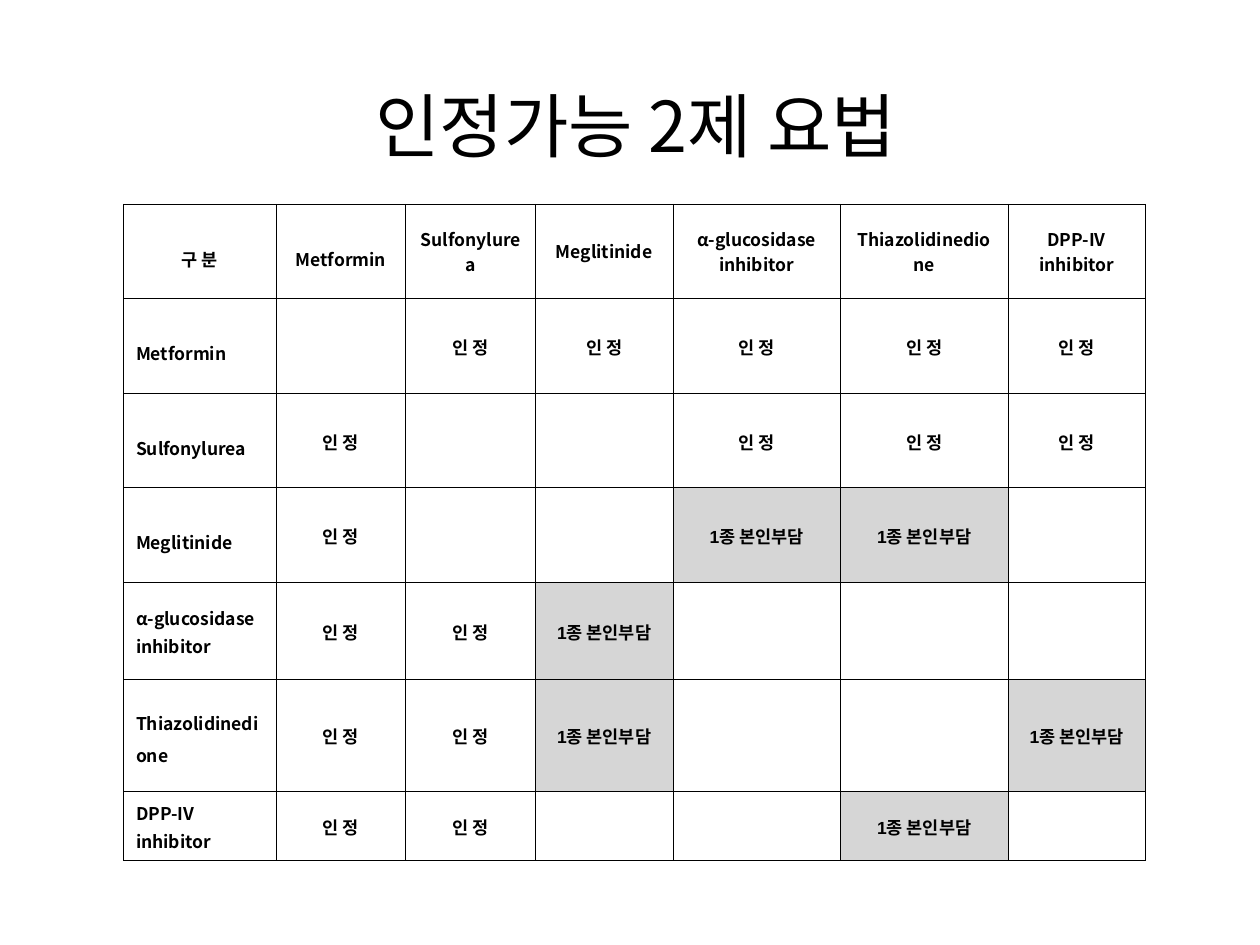
from dataclasses import dataclass

from lxml.etree import SubElement
from pptx import Presentation
from pptx.dml.color import RGBColor
from pptx.enum.dml import MSO_THEME_COLOR
from pptx.enum.text import MSO_ANCHOR, MSO_AUTO_SIZE, PP_ALIGN
from pptx.oxml import parse_xml
from pptx.oxml.ns import nsdecls, qn
from pptx.util import Inches, Pt


@dataclass(frozen=True)
class Theme:
    ink: str = "000000"
    copay_fill: str = "D6D6D6"
    title_font: str = "Noto Sans CJK KR"
    label_font: str = "Noto Sans CJK JP"
    mark_font: str = "Arial"
    title_size: float = 40
    cell_size: float = 10
    border_width: float = 0.28


DRUGS = ["Metformin", "Sulfonylurea", "Meglitinide", "α-glucosidase inhibitor",
         "Thiazolidinedione", "DPP-IV inhibitor"]
ALLOWED = "인 정"
COPAY = "1종 본인부담"
MARKS = {"o": ALLOWED, "c": COPAY, ".": ""}
# One line per drug: o = allowed, c = patient pays for one drug, . = not allowed
COMBINATIONS = [".ooooo", "o..ooo", "o..cc.", "ooc...", "ooc..c", "oo..c."]

COLUMN_WIDTHS = [1.21, 1.03, 1.03, 1.09, 1.33, 1.33, 1.09]
ROW_HEIGHTS = [0.75, 0.75, 0.75, 0.75, 0.77, 0.89, 0.55]
HEADER_SPACING = [1.6, 1.6, 1, 1, 1, 1, 1]
LABEL_SPACING = [1.6, 1.6, 1.6, 1.1, 1.3, 1.1]
MARK_SPACING = 1.1


def write_text(frame, text, *, font, east_asian, size, color, bold=False,
               align=PP_ALIGN.CENTER, spacing=1):
    paragraph = frame.paragraphs[0]
    paragraph.alignment = align
    paragraph.line_spacing = spacing
    run = paragraph.add_run()
    run.text = text
    run.font.name = font
    run.font.size = Pt(size)
    run.font.bold = bold
    run.font.color.rgb = RGBColor.from_string(color)
    SubElement(run.font._element, qn("a:ea"), typeface=east_asian)


class SlideBuilder:
    def __init__(self, slide, theme):
        self.slide = slide
        self.theme = theme

    def title(self, text, left, top, width, height):
        heading = self.slide.shapes.title
        heading.left, heading.top = Inches(left), Inches(top)
        heading.width, heading.height = Inches(width), Inches(height)
        frame = heading.text_frame
        frame.word_wrap = True
        frame.auto_size = MSO_AUTO_SIZE.SHAPE_TO_FIT_TEXT
        frame.vertical_anchor = MSO_ANCHOR.MIDDLE
        write_text(frame, text, font=self.theme.title_font,
                   east_asian=self.theme.title_font,
                   size=self.theme.title_size, color=self.theme.ink)

    def table(self, left, top, widths, heights):
        grid = self.slide.shapes.add_table(
            len(heights), len(widths), Inches(left), Inches(top),
            Inches(sum(widths)), Inches(sum(heights))).table
        grid.first_row = grid.horz_banding = False
        for column, width in zip(grid.columns, widths):
            column.width = Inches(width)
        for row, height in zip(grid.rows, heights):
            row.height = Inches(height)
        return grid

    def cell(self, cell, text, font, **text_format):
        cell.vertical_anchor = MSO_ANCHOR.MIDDLE
        if text == COPAY:
            cell.fill.solid()
            cell.fill.fore_color.rgb = RGBColor.from_string(self.theme.copay_fill)
        else:
            cell.fill.background()
        self.borders(cell)
        if text:
            write_text(cell.text_frame, text, font=font,
                       east_asian=self.theme.label_font,
                       size=self.theme.cell_size, color=self.theme.ink,
                       bold=True, **text_format)

    def borders(self, cell):
        """Outline all four sides; border elements must precede the fill."""
        properties = cell._tc.get_or_add_tcPr()
        for position, side in enumerate("LRTB"):
            properties.insert(position, parse_xml(
                f'<a:ln{side} {nsdecls("a")} w="{Pt(self.theme.border_width)}">'
                f'<a:solidFill><a:srgbClr val="{self.theme.ink}"/></a:solidFill>'
                f'</a:ln{side}>'))


def main():
    presentation = Presentation()
    presentation.slide_width, presentation.slide_height = Inches(10), Inches(7.5)
    slide = presentation.slides.add_slide(presentation.slide_layouts[5])
    slide.background.fill.solid()
    slide.background.fill.fore_color.theme_color = MSO_THEME_COLOR.BACKGROUND_1
    theme = Theme()
    builder = SlideBuilder(slide, theme)

    builder.title("인정가능 2제 요법", 0.91, 0.6, 8.27, 0.77)
    grid = builder.table(0.98, 1.62, COLUMN_WIDTHS, ROW_HEIGHTS)

    for column, (header, spacing) in enumerate(zip(["구 분", *DRUGS], HEADER_SPACING)):
        builder.cell(grid.cell(0, column), header, theme.label_font, spacing=spacing)
    drug_rows = zip(DRUGS, LABEL_SPACING, COMBINATIONS)
    for row, (drug, spacing, marks) in enumerate(drug_rows, start=1):
        builder.cell(grid.cell(row, 0), drug, theme.label_font,
                     align=PP_ALIGN.JUSTIFY, spacing=spacing)
        for column, mark in enumerate(marks, start=1):
            builder.cell(grid.cell(row, column), MARKS[mark], theme.mark_font,
                         spacing=MARK_SPACING)

    presentation.save("out.pptx")


if __name__ == "__main__":
    main()
